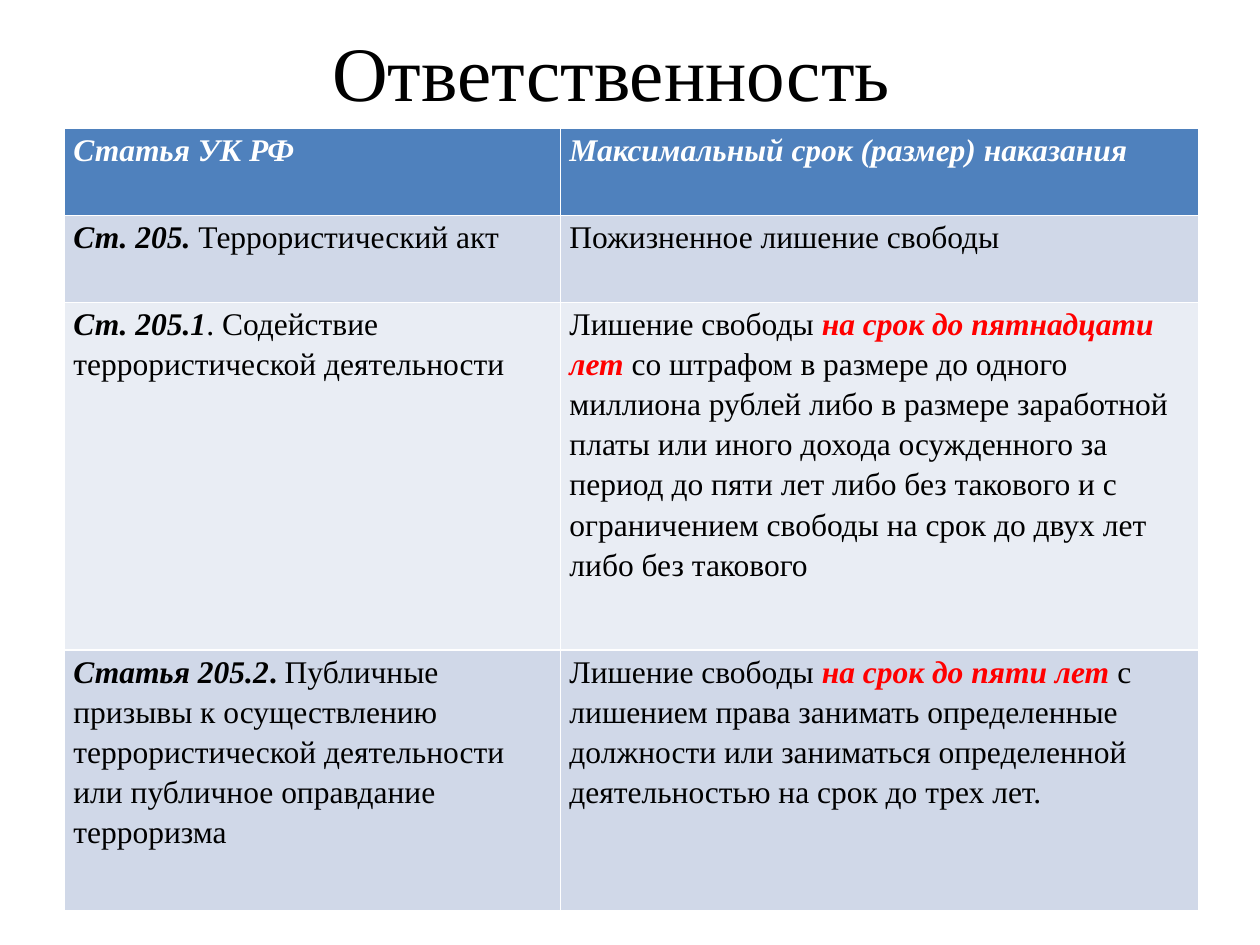
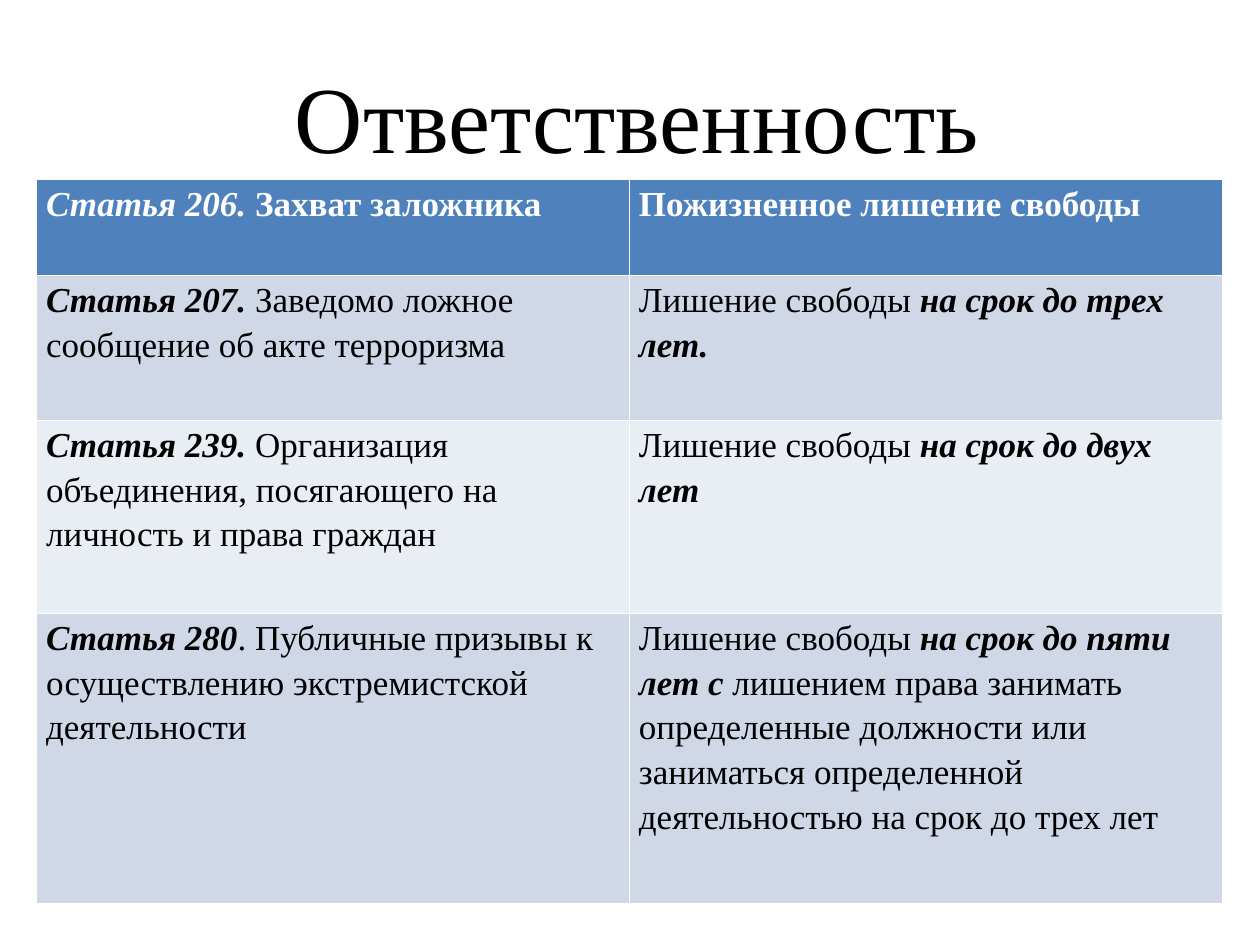
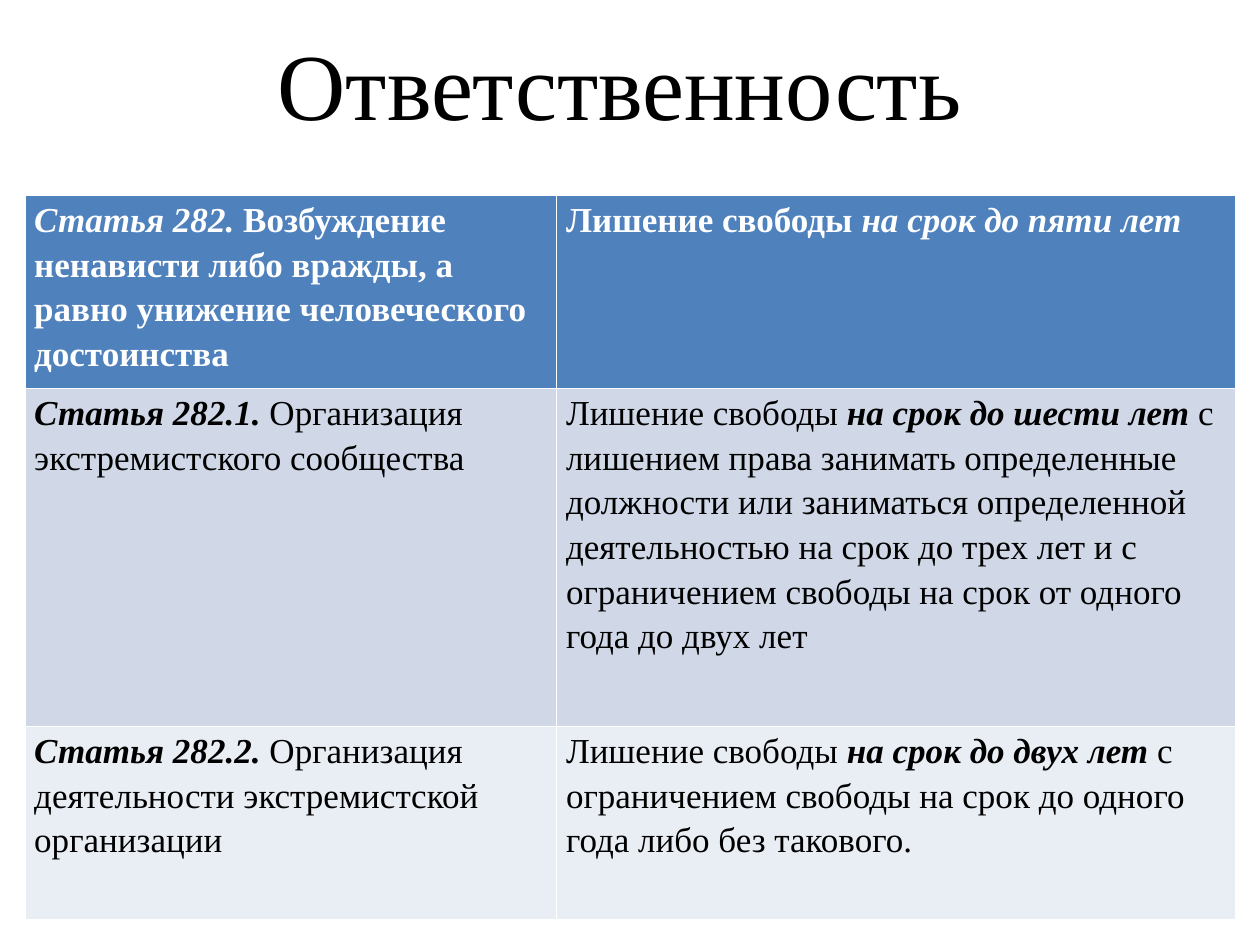
from pptx import Presentation
from pptx.dml.color import RGBColor
from pptx.enum.text import MSO_ANCHOR, MSO_AUTO_SIZE, PP_ALIGN
from pptx.util import Cm, Pt

FONT = "Times New Roman"
BLACK = RGBColor(0x00, 0x00, 0x00)
WHITE = RGBColor(0xFF, 0xFF, 0xFF)
RED = RGBColor(0xFF, 0x00, 0x00)
HEADER_FILL = RGBColor(0x4F, 0x81, 0xBD)
BAND_FILLS = [RGBColor(0xE9, 0xED, 0xF4), RGBColor(0xD0, 0xD8, 0xE8)]

TITLE = "Ответственность "
PLAIN, BOLD, STRONG, ALERT = "plain", "bold", "bold italic", "bold italic red"

PAGES = [
    {
        "title_box": (1.09, 0.33, 22.86, 2.21),
        "title_size": 44,
        "title_align": PP_ALIGN.CENTER,
        "table_at": (1.3, 2.59),
        "table_height": 15.77,
        "columns": (10, 12.86),
        "row_lines": (2, 2, 8, 6),
        "text_size": 18,
        "margin": 0.18,
        "rows": [
            ([("Статья УК РФ", STRONG)],
             [("Максимальный срок (размер) наказания", STRONG)]),
            ([("Ст. 205.", STRONG), (" Террористический акт", PLAIN)],
             [("Пожизненное лишение свободы", PLAIN)]),
            ([("Ст. 205.1", STRONG),
              (". Содействие террористической деятельности", PLAIN)],
             [("Лишение свободы ", PLAIN),
              ("на срок до пятнадцати лет ", ALERT),
              ("со штрафом в размере до одного миллиона рублей либо в размере "
               "заработной платы или иного дохода осужденного за период до пяти лет "
               "либо без такового и с ограничением свободы на срок до двух лет "
               "либо без такового", PLAIN)]),
            ([("Статья 205.2", STRONG), (".", BOLD),
              (" Публичные призывы к осуществлению террористической деятельности "
               "или публичное оправдание терроризма", PLAIN)],
             [("Лишение свободы ", PLAIN),
              ("на срок до пяти лет ", ALERT),
              ("с лишением права занимать определенные должности или заниматься "
               "определенной деятельностью на срок до трех лет.", PLAIN)]),
        ],
    },
    {
        "title_box": (5.69, 1.04, 14.45, 2.57),
        "title_size": 54,
        "title_align": PP_ALIGN.LEFT,
        "table_at": (0.74, 3.61),
        "table_height": 14.6,
        "columns": (11.95, 11.95),
        "row_lines": (2, 3, 4, 6),
        "text_size": 20,
        "margin": 0.19,
        "rows": [
            ([("Статья 206.", STRONG), (" Захват заложника", BOLD)],
             [("Пожизненное лишение свободы", BOLD)]),
            ([("Статья 207.", STRONG),
              (" Заведомо ложное сообщение об акте терроризма", PLAIN)],
             [("Лишение свободы ", PLAIN), ("на срок до трех лет.", STRONG)]),
            ([("Статья 239.", STRONG),
              (" Организация объединения, посягающего на личность и права граждан",
               PLAIN)],
             [("Лишение свободы ", PLAIN), ("на срок до двух лет", STRONG)]),
            ([("Статья 280", STRONG),
              (". Публичные призывы к осуществлению экстремистской деятельности",
               PLAIN)],
             [("Лишение свободы ", PLAIN),
              ("на срок до пяти лет с", STRONG),
              (" лишением права занимать определенные должности или заниматься "
               "определенной деятельностью на срок до трех лет", PLAIN)]),
        ],
    },
    {
        "title_box": (1.3, 0.08, 22.86, 3.18),
        "title_size": 54,
        "title_align": PP_ALIGN.CENTER,
        "table_at": (0.5, 3.94),
        "table_height": 14.6,
        "columns": (10.72, 13.69),
        "row_lines": (4, 7, 4),
        "text_size": 20,
        "margin": 0.19,
        "rows": [
            ([("Статья 282.", STRONG),
              (" Возбуждение ненависти либо вражды, а равно унижение человеческого "
               "достоинства", BOLD)],
             [("Лишение свободы ", BOLD), ("на срок до пяти лет", STRONG)]),
            ([("Статья 282.1.", STRONG),
              (" Организация экстремистского сообщества", PLAIN)],
             [("Лишение свободы ", PLAIN),
              ("на срок до шести лет", STRONG),
              (" с лишением права занимать определенные должности или заниматься "
               "определенной деятельностью на срок до трех лет и с ограничением "
               "свободы на срок от одного года до двух лет", PLAIN)]),
            ([("Статья 282.2.", STRONG),
              (" Организация деятельности экстремистской организации", PLAIN)],
             [("Лишение свободы ", PLAIN),
              ("на срок до двух лет", STRONG),
              (" с ограничением свободы на срок до одного года либо без такового.",
               PLAIN)]),
        ],
    },
]


def set_font(font, size, color):
    font.name = FONT
    font.size = Pt(size)
    font.color.rgb = color


def place_title(page, content):
    title = page.shapes.title
    title.left, title.top, title.width, title.height = map(Cm, content["title_box"])
    frame = title.text_frame
    frame.text = TITLE
    frame.auto_size = MSO_AUTO_SIZE.NONE
    frame.vertical_anchor = MSO_ANCHOR.MIDDLE
    paragraph = frame.paragraphs[0]
    paragraph.alignment = content["title_align"]
    set_font(paragraph.font, content["title_size"], BLACK)


def fill_cell(cell, spans, fill, color, content):
    cell.fill.solid()
    cell.fill.fore_color.rgb = fill
    cell.margin_left = cell.margin_right = Cm(content["margin"])
    cell.margin_top = cell.margin_bottom = 0
    paragraph = cell.text_frame.paragraphs[0]
    paragraph.line_spacing = 1.15
    for text, style in spans:
        span = paragraph.add_run()
        span.text = text
        set_font(span.font, content["text_size"], RED if style == ALERT else color)
        span.font.bold = style != PLAIN
        span.font.italic = style in (STRONG, ALERT)


def add_penalty_table(page, content):
    rows, columns = content["rows"], content["columns"]
    left, top = content["table_at"]
    height = content["table_height"]
    table = page.shapes.add_table(len(rows), len(columns), Cm(left), Cm(top),
                                  Cm(sum(columns)), Cm(height)).table
    for column, width in zip(table.columns, columns):
        column.width = Cm(width)
    line_height = height / sum(content["row_lines"])
    for index, (row, lines) in enumerate(zip(table.rows, content["row_lines"])):
        row.height = Cm(lines * line_height)
        fill, color = (BAND_FILLS[index % 2], BLACK) if index else (HEADER_FILL, WHITE)
        for cell, spans in zip(row.cells, rows[index]):
            fill_cell(cell, spans, fill, color, content)


def main():
    """Build the slides on criminal liability and save them."""
    deck = Presentation()
    deck.slide_width, deck.slide_height = Cm(25.4), Cm(19.05)
    for content in PAGES:
        page = deck.slides.add_slide(deck.slide_layouts[5])
        place_title(page, content)
        add_penalty_table(page, content)
    deck.save("out.pptx")


if __name__ == "__main__":
    main()
